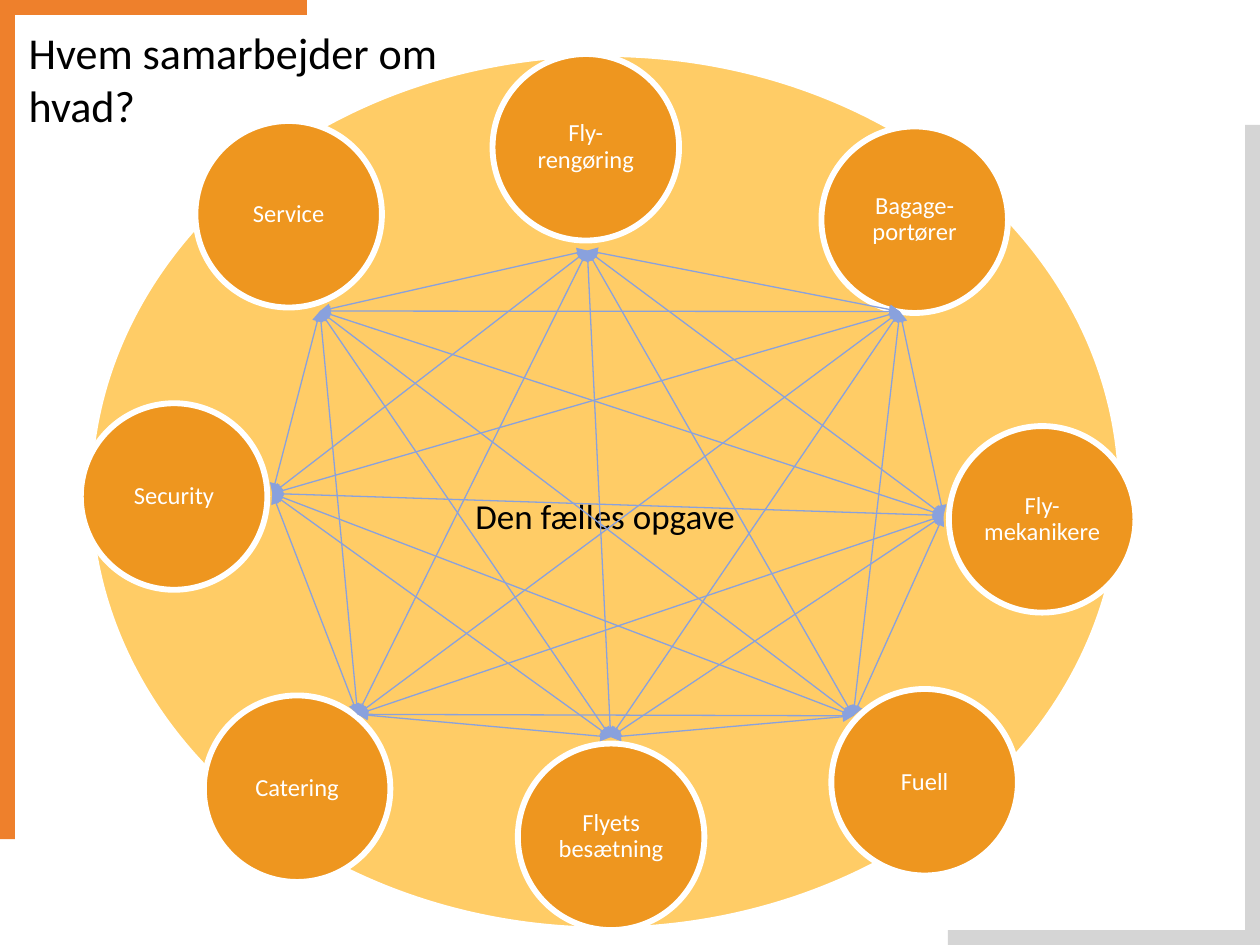
from itertools import combinations

from lxml.etree import SubElement
from pptx import Presentation
from pptx.dml.color import RGBColor
from pptx.enum.shapes import MSO_CONNECTOR as LINK, MSO_SHAPE as SHAPE
from pptx.enum.text import MSO_ANCHOR as ANCHOR, PP_ALIGN as ALIGN
from pptx.oxml.ns import qn
from pptx.util import Cm, Pt

FONT = "Calibri"
SIZE = 3.76  # circle diameter

# Colour, left, top, width, height
BARS = [
    ("D5D5D5", 25.1, 2.52, 0.3, 16.53),
    ("EE802C", 0, 0, 0.3, 16.92),
    ("EE802C", 0.2, 0, 5.99, 0.3),
    ("D5D5D5", 19.11, 18.75, 5.99, 0.3),
]

# Label, left and top of the circle, x and y where its arrows meet
TEAMS = [
    ("Fly-rengøring", 9.93, 1.09, 11.84, 5.05),
    ("Bagage-portører", 16.56, 2.55, 18.14, 6.28),
    ("Fly-mekanikere", 19.13, 8.59, 19.02, 10.39),
    ("Fuell", 16.76, 13.89, 17.2, 14.43),
    ("Flyets besætning", 10.44, 14.99, 12.31, 14.86),
    ("Catering", 4.11, 14.02, 7.21, 14.4),
    ("Security", 1.63, 8.13, 5.49, 9.95),
    ("Service", 3.94, 2.44, 6.45, 6.27),
]


def color(code):
    return RGBColor.from_string(code)


def add_form(slide, kind, box, fill, line=None):
    form = slide.shapes.add_shape(kind, *map(Cm, box))
    form.shadow.inherit = False
    form.fill.solid()
    form.fill.fore_color.rgb = color(fill)
    if line:
        form.line.color.rgb = color(line)
        form.line.width = Pt(3.35)
    else:
        form.line.fill.background()
    return form


def write(form, text, size, tint):
    frame = form.text_frame
    frame.word_wrap = True
    para = frame.paragraphs[0]
    run = para.add_run()
    run.text = text
    run.font.name = FONT
    run.font.size = Pt(size)
    run.font.color.rgb = color(tint)
    return frame


def center(frame):
    frame.vertical_anchor = ANCHOR.MIDDLE
    frame.margin_left = frame.margin_right = Cm(0.03)
    frame.margin_top = frame.margin_bottom = Cm(0.03)
    para = frame.paragraphs[0]
    para.alignment = ALIGN.CENTER
    para.line_spacing = 0.9


def add_text(slide, box, text, size):
    label = slide.shapes.add_textbox(*map(Cm, box))
    return write(label, text, size, "000000")


def add_team(slide, name, left, top):
    disc = add_form(slide, SHAPE.OVAL, (left, top, SIZE, SIZE),
                    "EE961F", "FFFFFF")
    center(write(disc, name, 14, "FFFFFF"))


def add_arrow(slide, start, end):
    arrow = slide.shapes.add_connector(LINK.STRAIGHT, *map(Cm, start + end))
    arrow.line.color.rgb = color("89A1DD")
    arrow.line.width = Pt(0.75)
    edge = arrow.line._get_or_add_ln()
    for tip in ("a:headEnd", "a:tailEnd"):
        SubElement(edge, qn(tip), type="triangle")
    SubElement(arrow._element.spPr, qn("a:effectLst"))


def main():
    deck = Presentation()
    deck.slide_width, deck.slide_height = Cm(25.4), Cm(19.05)
    slide = deck.slides.add_slide(deck.slide_layouts[6])

    # Frame bars
    for fill, *box in BARS:
        add_form(slide, SHAPE.RECTANGLE, box, fill)

    # Shared task
    add_form(slide, SHAPE.OVAL, (1.8, 1.09, 20.8, 17.65), "FFCC66", "FFFFFF")
    center(add_text(slide, (4.85, 9.7, 14.7, 1.5), "Den fælles opgave", 20))

    # Teams around it
    for name, left, top, *_ in TEAMS:
        add_team(slide, name, left, top)

    # Title
    add_text(slide, (0.33, 0.38, 9.83, 2.41), "Hvem samarbejder om hvad?", 25.2)

    # Every team works with every other
    ports = [(x, y) for *_, x, y in TEAMS]
    for start, end in combinations(ports, 2):
        add_arrow(slide, start, end)

    deck.save("out.pptx")


if __name__ == "__main__":
    main()
